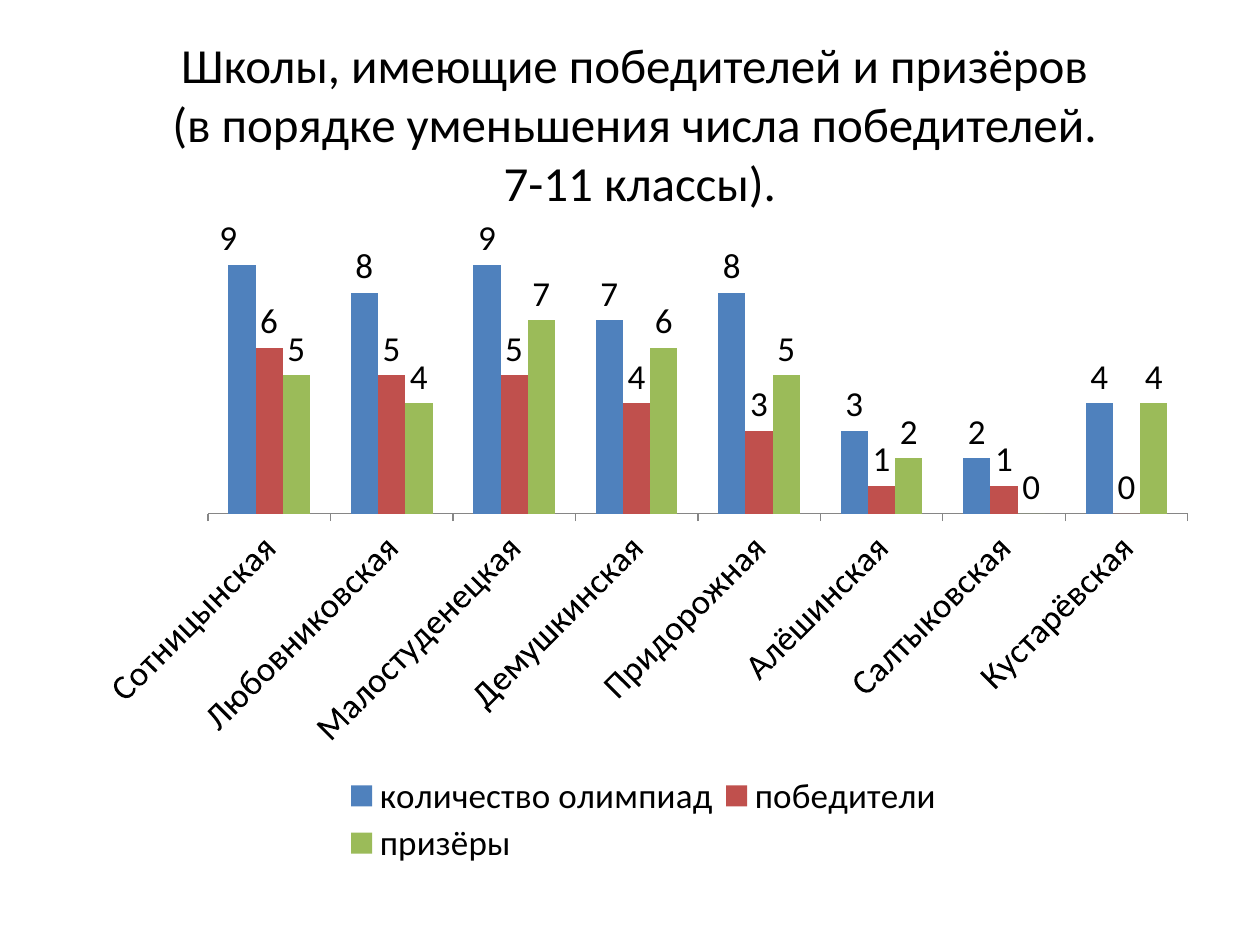
from lxml import etree
from pptx import Presentation
from pptx.chart.data import CategoryChartData
from pptx.dml.color import RGBColor
from pptx.enum.chart import (XL_CHART_TYPE, XL_LABEL_POSITION,
                             XL_LEGEND_POSITION, XL_TICK_MARK)
from pptx.enum.text import MSO_AUTO_SIZE, PP_ALIGN
from pptx.oxml.ns import qn
from pptx.util import Cm, Pt

BLACK = RGBColor(0x00, 0x00, 0x00)
GRAY = RGBColor(0x86, 0x86, 0x86)
BLUE = RGBColor(0x4F, 0x81, 0xBD)
RED = RGBColor(0xC0, 0x50, 0x4D)
GREEN = RGBColor(0x9B, 0xBB, 0x59)
FONT = "Calibri"
COLUMNS = XL_CHART_TYPE.COLUMN_CLUSTERED
ABOVE = XL_LABEL_POSITION.OUTSIDE_END
BOTTOM = XL_LEGEND_POSITION.BOTTOM
OUTSIDE = XL_TICK_MARK.OUTSIDE
CENTER = PP_ALIGN.CENTER
GROW = MSO_AUTO_SIZE.SHAPE_TO_FIT_TEXT

TITLE = ["Школы, имеющие победителей и призёров ",
         "(в порядке уменьшения числа победителей. ",
         "7-11 классы)."]
SCHOOLS = ["Сотницынская", "Любовниковская", "Малостуденецкая", "Демушкинская",
           "Придорожная", "Алёшинская", "Салтыковская", "Кустарёвская"]
RESULTS = [("количество олимпиад", BLUE, [9, 8, 9, 7, 8, 3, 2, 4]),
           ("победители", RED, [6, 5, 5, 4, 3, 1, 1, 0]),
           ("призёры", GREEN, [5, 4, 7, 6, 5, 2, 0, 4])]


def style_font(font, size):
    font.name = FONT
    font.size = Pt(size)
    font.color.rgb = BLACK


def place(element, settings):
    """Give a chart part a manual layout, as fractions of the chart."""
    for old in element.findall(qn("c:layout")):
        element.remove(old)
    layout = etree.Element(qn("c:layout"))
    manual = etree.SubElement(layout, qn("c:manualLayout"))
    for tag, value in settings.items():
        etree.SubElement(manual, qn("c:" + tag)).set("val", str(value))
    first = element[0]
    if first.tag in (qn("c:idx"), qn("c:legendPos")):
        first.addnext(layout)
    else:
        element.insert(0, layout)


deck = Presentation()
deck.slide_width, deck.slide_height = Cm(25.4), Cm(19.05)
page = deck.slides.add_slide(deck.slide_layouts[6])

# Column chart
data = CategoryChartData()
data.categories = SCHOOLS
for name, color, values in RESULTS:
    data.add_series(name, values)
chart = page.shapes.add_chart(COLUMNS, Cm(1.57), Cm(4.37), Cm(22.81), Cm(13.28),
                              data).chart
style_font(chart.font, 10)
chart.has_title = False
plot = chart.plots[0]
plot.vary_by_categories = False
plot.gap_width = 150
plot.overlap = 0
place(chart.element.find(".//" + qn("c:plotArea")),
      {"layoutTarget": "inner", "xMode": "edge", "yMode": "edge",
       "x": 0.115, "y": 0.03, "w": 0.866, "h": 0.42})

# Series colours and value labels
for series, (name, color, values) in zip(plot.series, RESULTS):
    series.format.fill.solid()
    series.format.fill.fore_color.rgb = color
    series.invert_if_negative = False
    labels = series.data_labels
    labels.show_value = True
    labels.position = ABOVE
    style_font(labels.font, 20)

# The first label sits slightly to the left of its column
first_label = plot.series[0].points[0].data_label
style_font(first_label.font, 20)
first_label.position = ABOVE
place(chart.element.find(".//" + qn("c:dLbl")), {"x": -0.012, "y": 0})

# Axes
school_axis = chart.category_axis
school_axis.major_tick_mark = OUTSIDE
school_axis.format.line.color.rgb = GRAY
style_font(school_axis.tick_labels.font, 20)
school_axis._element.find(".//" + qn("a:bodyPr")).set("rot", "-2700000")
value_axis = chart.value_axis
value_axis.minimum_scale, value_axis.maximum_scale = 0, 10
value_axis.has_major_gridlines = False
value_axis.visible = False

# Legend
chart.has_legend = True
legend = chart.legend
legend.position = BOTTOM
legend.include_in_layout = False
style_font(legend.font, 20)
place(legend._element, {"xMode": "edge", "yMode": "edge",
                        "x": 0.23, "y": 0.84, "w": 0.54, "h": 0.15})

# Title
box = page.shapes.add_textbox(Cm(2.18), Cm(0.58), Cm(21.44), Cm(3.84))
frame = box.text_frame
frame.word_wrap = True
frame.auto_size = GROW
for index, line in enumerate(TITLE):
    para = frame.add_paragraph() if index else frame.paragraphs[0]
    para.alignment = CENTER
    span = para.add_run()
    span.text = line
    style_font(span.font, 28)

deck.save("out.pptx")
